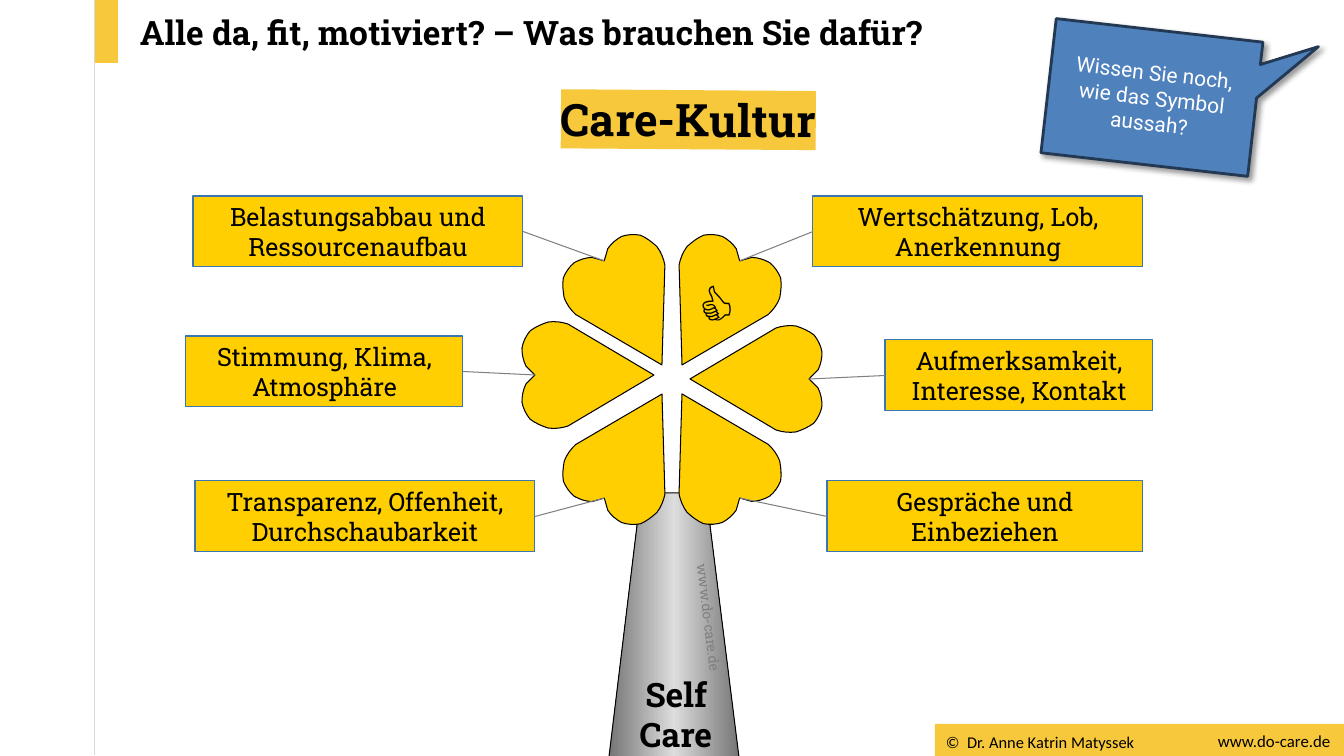
from math import cos, sin, radians
from copy import deepcopy
from lxml.etree import SubElement
from pptx import Presentation
from pptx.dml.color import RGBColor
from pptx.enum.shapes import MSO_CONNECTOR, MSO_SHAPE
from pptx.enum.text import MSO_ANCHOR, PP_ALIGN
from pptx.oxml.ns import qn
from pptx.util import Pt

PX = 914400 / 100.8
SLAB, CALIBRI, ROBOTO = "Roboto Slab", "Calibri", "Roboto"
AMBER, YELLOW, BLACK = "F7C83B", "FFCF01", "000000"
LEFT, CENTER, RIGHT = PP_ALIGN.LEFT, PP_ALIGN.CENTER, PP_ALIGN.RIGHT
TOP, MIDDLE = MSO_ANCHOR.TOP, MSO_ANCHOR.MIDDLE

BARS = [(935, 724, 409, 33), (95, 0, 23, 63)]
FOOTER_TITLE = [
    ("www.do-care.de", (1208, 726, 136, 30), dict(size=12, name=CALIBRI), dict(wrap=False)),
    ("©  Dr. Anne Katrin Matyssek", (936, 722, 324, 39), dict(size=11.7, name=CALIBRI),
     dict(anchor=MIDDLE)),
    ("Alle da, fit, motiviert? – Was brauchen Sie dafür?", (130, 4, 1078, 62),
     dict(size=24, name=SLAB, bold=True), dict(anchor=MIDDLE, spacing=0.9)),
]
TRUNK = [(609, 757), (641, 493), (706, 493), (739, 757)]
TRUNK_STOPS = [(0, "767676"), (0.5, "DDDDDD"), (1, "767676")]
HEART_LENGTH = 132
HEART_NOTCH = (0, -119)
HEART_SIDE = [
    (2, -121), (7, -126), (9, -128),
    (15, -131), (21, -132), (27, -132),
    (33, -131), (39, -128), (44, -124),
    (48, -119), (51, -112), (53, -106),
    (54, -99), (53, -92), (51, -86),
]
PETALS = [
    ((654, 375), 180, "Stimmung, Klima, Atmosphäre", (186, 336, 277, 71)),
    ((662, 365), 241, "Belastungsabbau und Ressourcenaufbau", (193, 196, 330, 71)),
    ((682, 365), 299, "Wertschätzung, Lob,\nAnerkennung", (813, 196, 330, 71)),
    ((690, 379), 0, "Aufmerksamkeit,\nInteresse, Kontakt", (885, 340, 268, 71)),
    ((662, 394), 119, "Transparenz, Offenheit, Durchschaubarkeit", (195, 481, 340, 71)),
    ((682, 394), 61, "Gespräche und Einbeziehen", (827, 481, 316, 71)),
]
PETAL_PATCH = (682, 431, 55, 57)
FLOWER_TEXTS = [
    ("Self Care", (611, 669, 130, 93), dict(size=24, name=SLAB, bold=True), dict(align=CENTER)),
    ("Care-Kultur", (551, 88, 470, 64), dict(size=32, name=SLAB, bold=True),
     dict(rotation=0.4, highlight=AMBER)),
    ("www.do-care.de", (620, 552, 170, 69), dict(size=10, name=SLAB, color="808080"),
     dict(rotation=83.1, align=RIGHT, anchor=MIDDLE, inset=0)),
    ("👍", (688, 267, 70, 78), dict(size=40, name=SLAB, bold=True), {}),
]
CALLOUT = ("Wissen Sie noch, wie das Symbol aussah?", (1048, 30, 208, 135))


def emu(*values):
    return [round(v * PX) for v in values]


def rgb(color):
    return RGBColor.from_string(color)


def style(s, fill, line=None, width=0.75):
    s.shadow.inherit = False
    if fill:
        s.fill.solid()
        s.fill.fore_color.rgb = rgb(fill)
    if line:
        s.line.color.rgb = rgb(line)
        s.line.width = Pt(width)
    else:
        s.line.fill.background()


def write(s, text, font, align=LEFT, anchor=TOP, wrap=True, spacing=None,
          rotation=0, inset=None, highlight=None):
    tf = s.text_frame
    tf.word_wrap, tf.vertical_anchor, s.rotation = wrap, anchor, rotation
    if inset is not None:
        for side in ("left", "top", "right", "bottom"):
            setattr(tf, f"margin_{side}", inset)
    for i, content in enumerate(text.split("\n")):
        p = tf.add_paragraph() if i else tf.paragraphs[0]
        p.alignment = align
        if spacing:
            p.line_spacing = spacing
        r = p.add_run()
        r.text = content
        r.font.color.rgb = rgb(font.get("color", BLACK))
        for key, value in font.items():
            if key != "color":
                setattr(r.font, key, Pt(value) if key == "size" else value)
        if highlight:
            rpr = r._r.get_or_add_rPr()
            mark = SubElement(rpr, qn("a:highlight"))
            SubElement(mark, qn("a:srgbClr"), val=highlight)
            rpr.find(qn("a:latin")).addprevious(mark)


def add_text(shapes, text, box, font, layout):
    write(shapes.add_textbox(*emu(*box)), text, font, **layout)


def add_rect(shapes, box, fill, line=None):
    s = shapes.add_shape(MSO_SHAPE.RECTANGLE, *emu(*box))
    style(s, fill, line)
    return s


def add_outline(shapes, points, fill):
    start, *rest = [emu(*point) for point in points]
    builder = shapes.build_freeform(*start)
    builder.add_line_segments(rest, close=True)
    s = builder.convert_to_shape()
    style(s, fill, BLACK)
    return s


def add_line(shapes, start, end, color):
    c = shapes.add_connector(MSO_CONNECTOR.STRAIGHT, *emu(*start, *end))
    c.line.color.rgb = rgb(color)
    c.line.width = Pt(0.75)
    SubElement(c._element.spPr, qn("a:effectLst"))
    return c


def toward(tip, angle, distance):
    return tip[0] + distance * cos(radians(angle)), tip[1] + distance * sin(radians(angle))


def bend(segments):
    for i in range(0, len(segments), 3):
        curve = segments[i].getparent().makeelement(qn("a:cubicBezTo"))
        segments[i].addprevious(curve)
        for segment in segments[i:i + 3]:
            curve.append(segment[0])
            segment.getparent().remove(segment)


def add_heart(shapes, tip, angle, mirrored):
    other_side = [(-x, y) for x, y in HEART_SIDE[-2::-1] + [HEART_NOTCH]]
    last = HEART_SIDE[-1]
    points = [HEART_NOTCH, *HEART_SIDE, (0, 0), (-last[0], last[1]), *other_side]
    s = add_outline(shapes, points, YELLOW)
    segments = list(s._element.iter(qn("a:lnTo")))
    side = len(HEART_SIDE)
    bend(segments[:side])
    bend(segments[side + 2:])
    x, y = toward(tip, angle, HEART_LENGTH / 2)
    s.left, s.top = round(x * PX - s.width / 2), round(y * PX - s.height / 2)
    s.rotation = (angle + 90 + 180 * mirrored) % 360
    if mirrored:
        s._element.spPr.find(qn("a:xfrm")).set("flipV", "1")


def add_trunk(shapes):
    s = add_outline(shapes, TRUNK, None)
    s.fill.gradient()
    s.fill.gradient_angle = 0
    stops = s._element.spPr.find(qn("a:gradFill")).find(qn("a:gsLst"))
    stops.append(deepcopy(stops[0]))
    for stop, (position, color) in zip(s.fill.gradient_stops, TRUNK_STOPS):
        stop.position = position
        stop.color.rgb = rgb(color)


def add_petal(shapes, tip, angle, text, box):
    on_right = box[0] > tip[0]
    add_heart(shapes, tip, angle, on_right)
    label = add_rect(shapes, box, YELLOW, "3A76B2")
    write(label, text, dict(size=18, name=SLAB), align=CENTER)
    line = add_line(shapes, box[:2], toward(tip, angle, -HEART_NOTCH[1]), "808080")
    line.begin_connect(label, 1 if on_right else 3)


def add_callout(shapes, text, box):
    s = shapes.add_shape(MSO_SHAPE.RECTANGULAR_CALLOUT, *emu(*box))
    s.adjustments[0], s.adjustments[1] = 0.768, -0.514
    style(s, "4F81BD", "233953", 2)
    write(s, text, dict(size=15, name=ROBOTO, color="FFFFFF"),
          align=CENTER, anchor=MIDDLE, rotation=6.5)
    effects = s._element.spPr.find(qn("a:effectLst"))
    shadow = SubElement(effects, qn("a:outerShdw"), blurRad=str(Pt(4)), dist=str(Pt(3)),
                        dir="2700000", algn="tl", rotWithShape="0")
    color = SubElement(shadow, qn("a:srgbClr"), val=BLACK)
    SubElement(color, qn("a:alpha"), val="40000")


def main():
    """Build the Care-Kultur flower slide."""
    prs = Presentation()
    prs.slide_width, prs.slide_height = emu(1344, 756)
    shapes = prs.slides.add_slide(prs.slide_layouts[6]).shapes
    for box in BARS:
        add_rect(shapes, box, AMBER)
    for item in FOOTER_TITLE:
        add_text(shapes, *item)
    add_trunk(shapes)
    for petal in PETALS:
        add_petal(shapes, *petal)
    add_rect(shapes, PETAL_PATCH, YELLOW)
    for item in FLOWER_TEXTS:
        add_text(shapes, *item)
    add_callout(shapes, *CALLOUT)
    add_line(shapes, (95, 0), (95, 755), "D9D9D9")
    prs.save("out.pptx")


if __name__ == "__main__":
    main()
